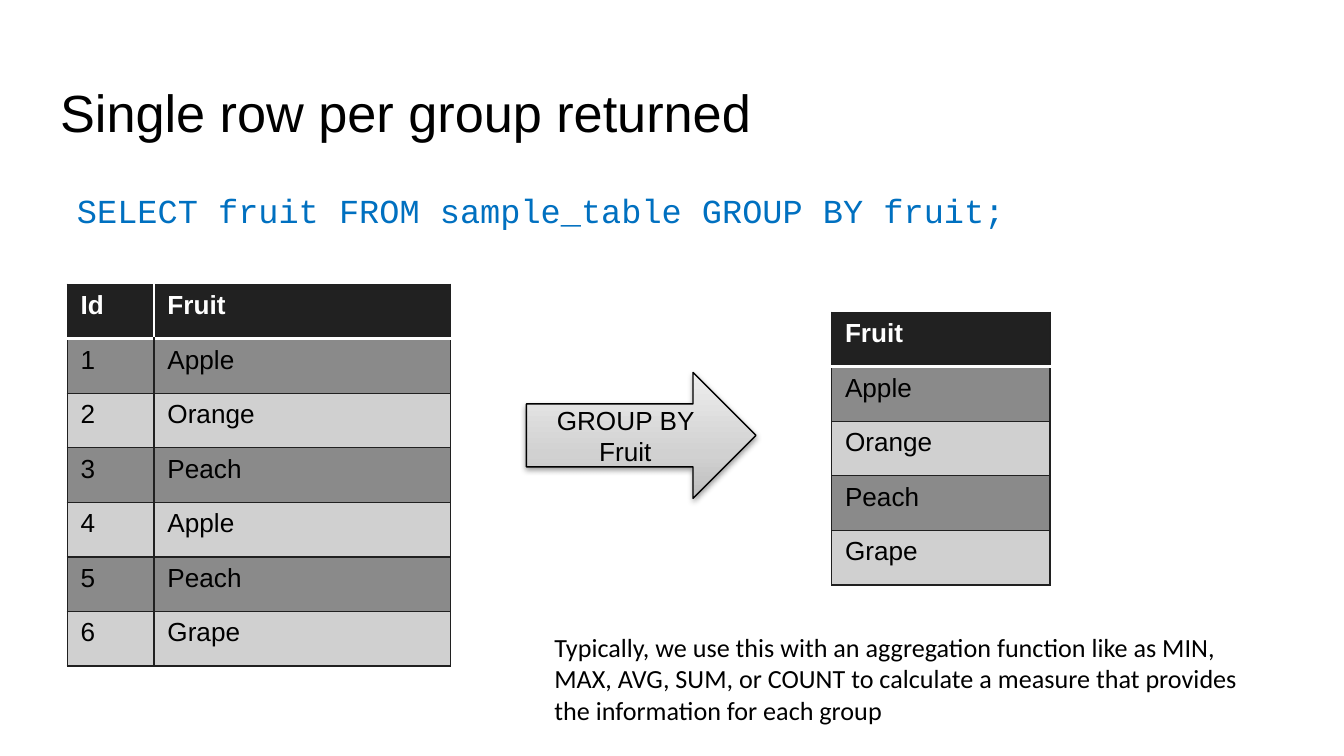
import lxml.etree
import pptx
import pptx.dml.color
import pptx.enum.shapes
import pptx.enum.text
import pptx.oxml.ns
import pptx.util

SCALE = 9525
INK = "000000"
HEADER = "212121"
BORDER = "202020"
WHITE = "FFFFFF"
BANDS = ("8A8A8A", "D0D0D0")


def px(length):
    return pptx.util.Emu(length * SCALE)


def color(value):
    return pptx.dml.color.RGBColor.from_string(value)


def add_element(parent, tag, **attributes):
    element = lxml.etree.SubElement(parent, pptx.oxml.ns.qn(tag))
    for name, value in attributes.items():
        element.set(name, str(value))
    return element


def write(frame, text, size=14, font="Arial", ink=INK, bold=False,
          align="LEFT", spacing=1.0, indent=0):
    para = frame.paragraphs[0]
    para.alignment = getattr(pptx.enum.text.PP_ALIGN, align)
    para.line_spacing = spacing
    if indent:
        para._p.get_or_add_pPr().set("marL", str(px(indent)))
    span = para.add_run()
    span.text = text
    span.font.size = pptx.util.Pt(size)
    span.font.name = font
    span.font.bold = bold
    span.font.color.rgb = color(ink)


class SlideBuilder:
    def __init__(self, slide):
        self.slide = slide
        self.row_height = 39
        self.border_width = 0.75

    def text(self, left, top, width, height, text, inset=5, **style):
        box = self.slide.shapes.add_textbox(px(left), px(top), px(width), px(height))
        frame = box.text_frame
        frame.word_wrap = True
        frame.margin_left = frame.margin_right = px(10)
        frame.margin_top = frame.margin_bottom = px(inset)
        write(frame, text, **style)

    def border(self, cell, side, ink, width):
        line = add_element(cell._tc.get_or_add_tcPr(), f"a:ln{side}",
                           w=pptx.util.Pt(width))
        fill = add_element(line, "a:solidFill")
        add_element(fill, "a:srgbClr", val=ink)

    def table(self, left, top, widths, rows):
        frame = self.slide.shapes.add_table(
            len(rows), len(widths), px(left), px(top),
            px(sum(widths)), px(self.row_height * len(rows)))
        table = frame.table
        for column, width in zip(table.columns, widths):
            column.width = px(width)
        for row_index, row in enumerate(rows):
            table.rows[row_index].height = px(self.row_height)
            is_header = row_index == 0
            for column_index, text in enumerate(row):
                cell = table.cell(row_index, column_index)
                write(cell.text_frame, text, bold=is_header,
                      ink=WHITE if is_header else INK)
                for side in "LRTB":
                    under_header = (row_index, side) in ((0, "B"), (1, "T"))
                    inside_header = is_header and (
                        side == "L" and column_index > 0
                        or side == "R" and column_index < len(widths) - 1)
                    if under_header:
                        self.border(cell, side, WHITE, 2)
                    elif not inside_header:
                        self.border(cell, side, BORDER, self.border_width)
                cell.fill.solid()
                cell.fill.fore_color.rgb = color(
                    HEADER if is_header else BANDS[(row_index - 1) % 2])

    def arrow(self, left, top, width, height, text, stops):
        arrow = self.slide.shapes.add_shape(
            pptx.enum.shapes.MSO_SHAPE.RIGHT_ARROW,
            px(left), px(top), px(width), px(height))
        arrow.fill.gradient()
        arrow.fill.gradient_angle = 90
        properties = arrow._element.spPr
        stop_list = properties.find(".//" + pptx.oxml.ns.qn("a:gsLst"))
        for stop in list(stop_list):
            stop_list.remove(stop)
        for position, ink in stops:
            stop = add_element(stop_list, "a:gs", pos=position * 1000)
            add_element(stop, "a:srgbClr", val=ink)
        arrow.line.color.rgb = color(INK)
        arrow.line.width = pptx.util.Pt(self.border_width)
        arrow.shadow.inherit = False
        effects = properties.find(pptx.oxml.ns.qn("a:effectLst"))
        shadow = add_element(effects, "a:outerShdw", blurRad=40000, dist=20000,
                             dir=5400000, rotWithShape=0)
        shade = add_element(shadow, "a:srgbClr", val=INK)
        add_element(shade, "a:alpha", val=38000)
        frame = arrow.text_frame
        frame.word_wrap = True
        frame.vertical_anchor = pptx.enum.text.MSO_ANCHOR.MIDDLE
        write(frame, text, align="CENTER")


def main():
    deck = pptx.Presentation()
    deck.slide_width, deck.slide_height = px(960), px(540)
    page = SlideBuilder(deck.slides.add_slide(deck.slide_layouts[6]))

    page.text(33, 47, 895, 60, "Single row per group returned", inset=10, size=28)
    page.text(33, 121, 895, 359, "SELECT fruit FROM sample_table GROUP BY fruit;",
              inset=10, size=18, font="Courier New", ink="0070C0",
              spacing=1.15, indent=12)

    fruits = ["Apple", "Orange", "Peach", "Apple", "Peach", "Grape"]
    sample_rows = [(str(number), fruit) for number, fruit in enumerate(fruits, 1)]
    group_rows = [(fruit,) for fruit in dict.fromkeys(fruits)]
    page.table(48, 203, [62, 212], [("Id", "Fruit")] + sample_rows)
    page.arrow(376, 266, 164, 90, "GROUP BY Fruit",
               [(0, "BDBDBD"), (35, "D1D1D1"), (100, "EEEEEE")])
    page.table(594, 223, [156], [("Fruit",)] + group_rows)

    page.text(386, 446, 536, 78,
              "Typically, we use this with an aggregation function like "
              "as MIN, MAX, AVG, SUM, or COUNT to calculate a measure that "
              "provides the information for each group", font="Calibri")
    deck.save("out.pptx")


if __name__ == "__main__":
    main()
